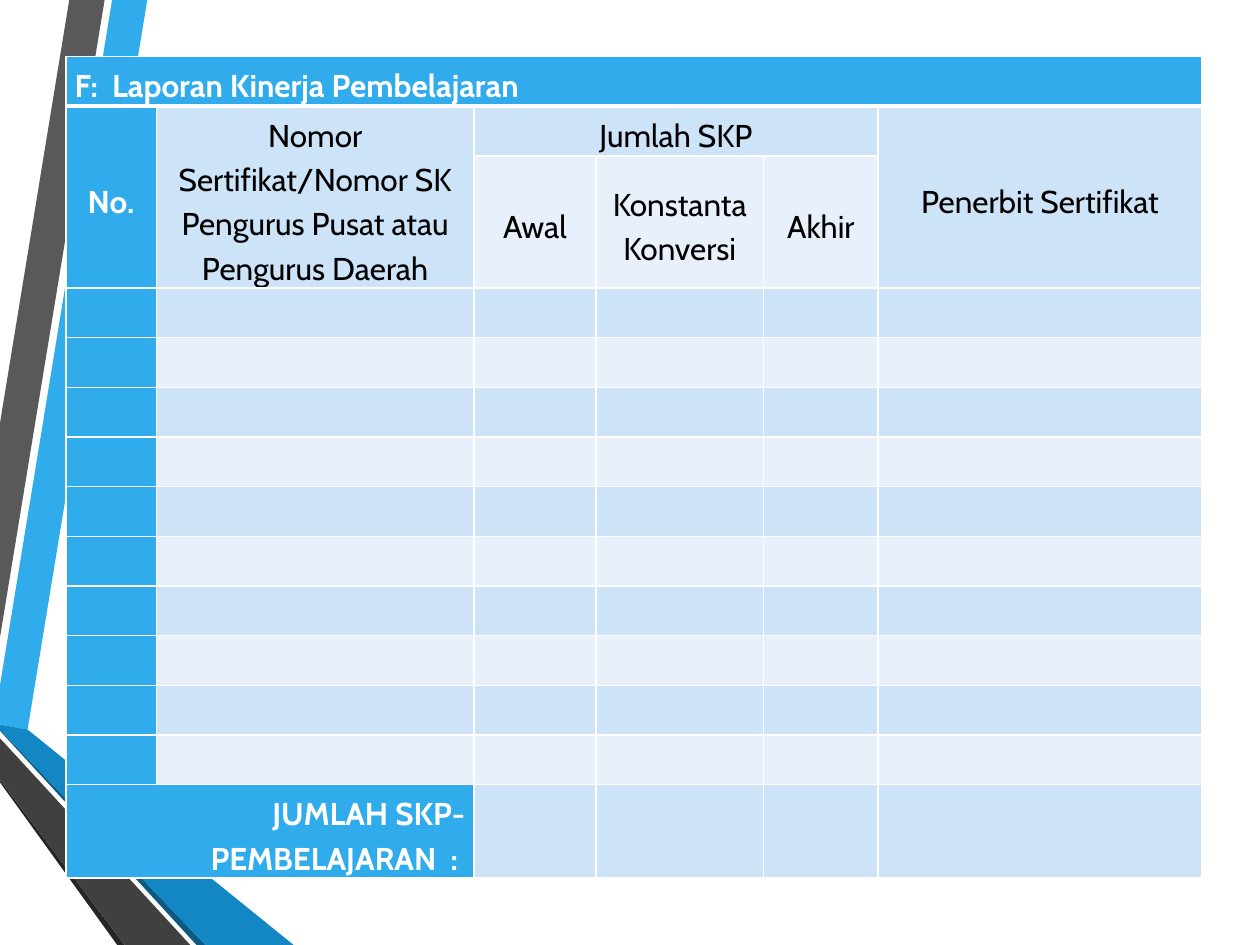
from lxml.etree import SubElement
from pptx import Presentation
from pptx.dml.color import RGBColor as Rgb
from pptx.enum.text import MSO_ANCHOR as Anchor, PP_ALIGN as Align
from pptx.oxml.ns import qn
from pptx.util import Pt

COLORS = {
    "blue": "30ACEC", "gray": "595959", "black": "262626", "navy": "0C5A82",
    "ocean": "1287C3", "charcoal": "404040", "band": "CDE3F8",
    "pale": "E8F1FB", "white": "FFFFFF", "text": "000000",
}
FONT = "Cabin"
RIBBONS = [
    ("blue", [(0, 391.7), (0, 414), (15.8, 416.9), (84.2, 0), (64.1, 0)]),
    ("gray", [(59.8, 0), (39.6, 0), (0, 241.9), (0, 364.3)]),
    ("black", [(0, 445.7), (0, 447.1), (67, 540), (71.3, 540)]),
    ("navy", [(0, 416.9), (0, 417.6), (112.3, 540), (117.4, 540)]),
    ("ocean", [(0, 416.9), (117.4, 540), (167.8, 540), (15.8, 416.9), (0, 414)]),
    ("charcoal", [(0, 445.7), (71.3, 540), (108.7, 540), (0, 421.9)]),
]
COLUMN_WIDTHS = [51.8, 181.4, 69.8, 95.8, 65.5, 185]
BLANK_ROWS = 10
ROW_HEIGHTS = [28.4, 28.4, 75.5] + [28.4] * BLANK_ROWS + [53]
LAST_ROW = len(ROW_HEIGHTS) - 1
TABLE_LEFT, TABLE_TOP = 37.6, 32.3
MERGES = [
    ((0, 0), (0, 5)), ((1, 0), (2, 0)), ((1, 1), (2, 1)),
    ((1, 2), (1, 4)), ((1, 5), (2, 5)), ((LAST_ROW, 0), (LAST_ROW, 1)),
]
LABELS = {
    (0, 0): ("F:  Laporan Kinerja Pembelajaran", Align.JUSTIFY),
    (1, 0): ("No.", Align.CENTER),
    (1, 1): ("Nomor Sertifikat/Nomor SK Pengurus Pusat atau Pengurus Daerah", Align.CENTER),
    (1, 2): ("Jumlah SKP", Align.CENTER),
    (1, 5): ("Penerbit Sertifikat", Align.CENTER),
    (2, 2): ("Awal", Align.CENTER),
    (2, 3): ("Konstanta Konversi", Align.CENTER),
    (2, 4): ("Akhir", Align.CENTER),
    (LAST_ROW, 0): ("JUMLAH SKP-PEMBELAJARAN  : ", Align.RIGHT),
}


def color(name):
    return Rgb.from_string(COLORS[name])


def draw_ribbon(slide, fill, points):
    corners = [(Pt(x), Pt(y)) for x, y in points]
    builder = slide.shapes.build_freeform(*corners[0], scale=1.0)
    builder.add_line_segments(corners[1:], close=True)
    ribbon = builder.convert_to_shape()
    ribbon.shadow.inherit = False
    ribbon.fill.solid()
    ribbon.fill.fore_color.rgb = color(fill)
    ribbon.line.fill.background()


def draw_borders(cell, widths):
    properties = cell._tc.get_or_add_tcPr()
    for side, width in widths.items():
        border = SubElement(properties, qn(f"a:ln{side}"), w=str(Pt(width)))
        fill = SubElement(border, qn("a:solidFill"))
        SubElement(fill, qn("a:srgbClr"), val=COLORS["white"])


def is_heading(row, column):
    return row == 0 or column == 0 or (row == LAST_ROW and column == 1)


def format_cell(cell, row, column):
    cell.margin_left = cell.margin_right = Pt(5)
    cell.margin_top, cell.margin_bottom = Pt(2.9), 0
    cell.vertical_anchor = Anchor.MIDDLE
    draw_borders(cell, {"L": 1, "R": 1, "T": 3 if row == 1 else 1, "B": 3 if row == 0 else 1})
    heading = is_heading(row, column)
    cell.fill.solid()
    cell.fill.fore_color.rgb = color("blue" if heading else "band" if row % 2 else "pale")
    if (row, column) in LABELS:
        label, alignment = LABELS[row, column]
        paragraph = cell.text_frame.paragraphs[0]
        paragraph.text = label
        paragraph.alignment = alignment
        paragraph.line_spacing = 1.15
        font = paragraph.runs[0].font
        font.name, font.size, font.bold = FONT, Pt(18), heading
        font.color.rgb = color("white" if heading else "text")


def draw_report(slide):
    report = slide.shapes.add_table(
        len(ROW_HEIGHTS), len(COLUMN_WIDTHS), Pt(TABLE_LEFT), Pt(TABLE_TOP),
        Pt(sum(COLUMN_WIDTHS)), Pt(sum(ROW_HEIGHTS)),
    ).table
    for column, width in zip(report.columns, COLUMN_WIDTHS):
        column.width = Pt(width)
    for row, height in zip(report.rows, ROW_HEIGHTS):
        row.height = Pt(height)
    for first, last in MERGES:
        report.cell(*first).merge(report.cell(*last))
    for row in range(len(ROW_HEIGHTS)):
        for column in range(len(COLUMN_WIDTHS)):
            format_cell(report.cell(row, column), row, column)


def main():
    """Build the learning performance report slide."""
    deck = Presentation()
    deck.slide_width, deck.slide_height = Pt(720), Pt(540)
    slide = deck.slides.add_slide(deck.slide_layouts[6])
    for fill, points in RIBBONS:
        draw_ribbon(slide, fill, points)
    draw_report(slide)
    deck.save("out.pptx")


if __name__ == "__main__":
    main()
